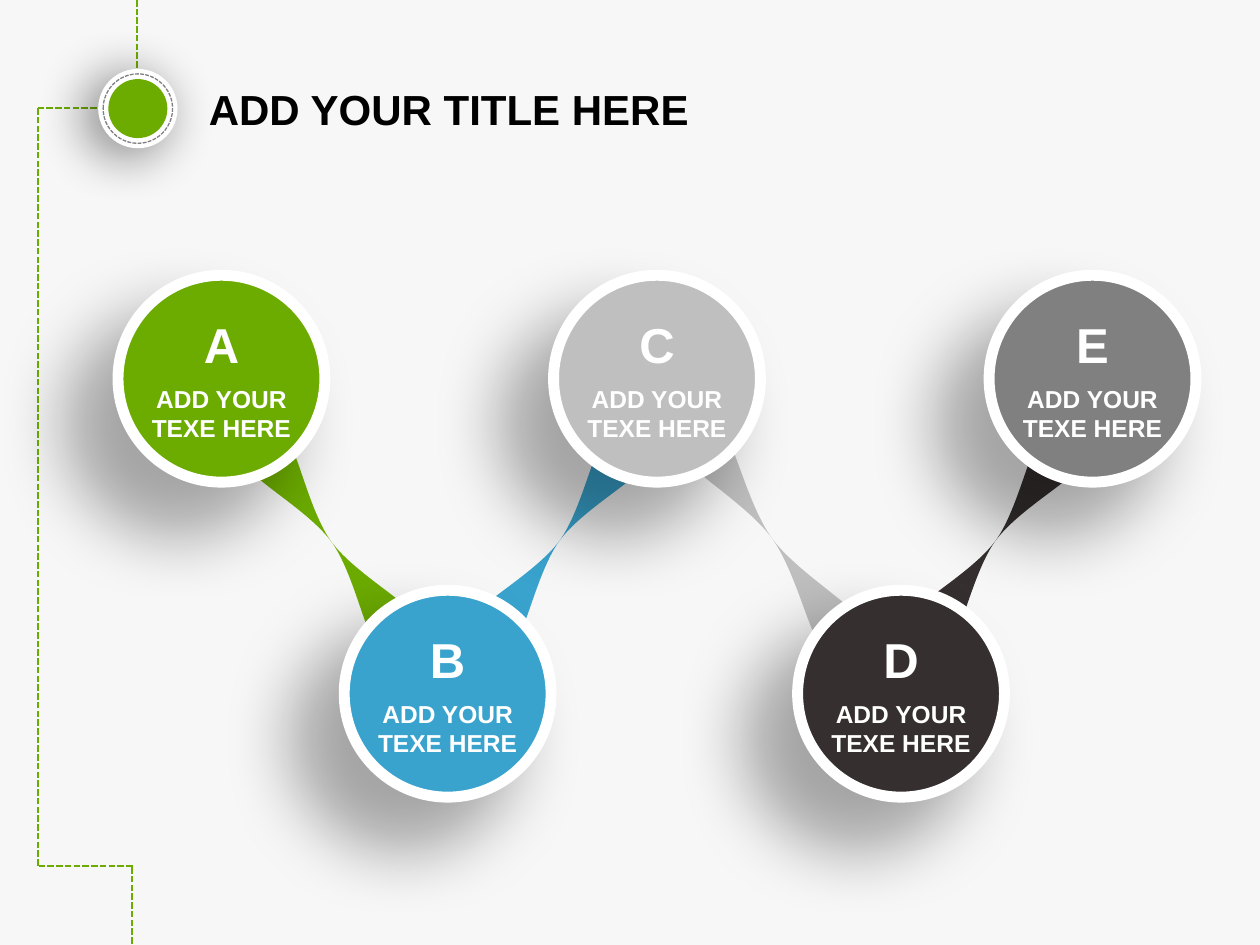
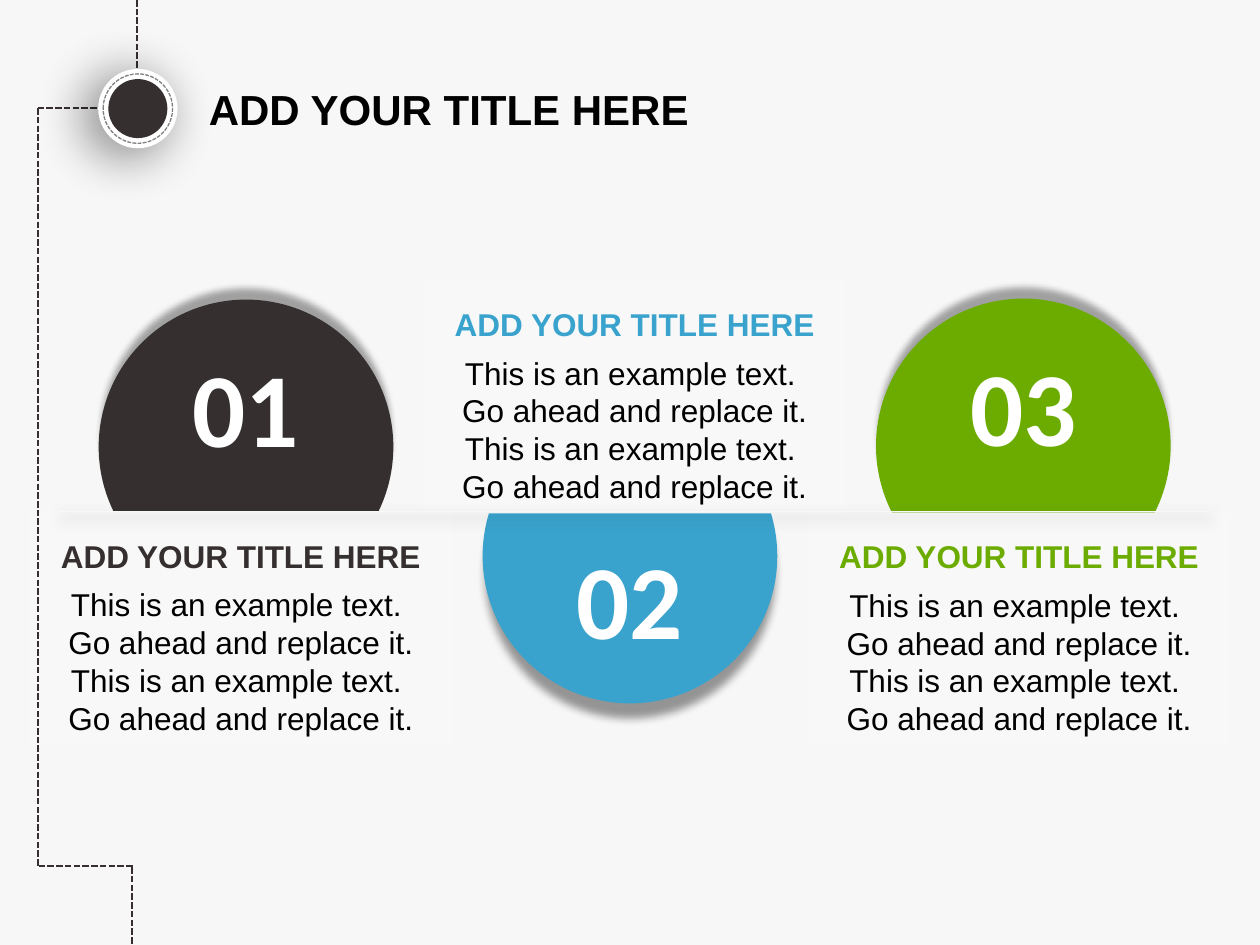
"""Build two infographic slides: a chain of five circles and three numbered discs."""
from lxml import etree
from pptx import Presentation
from pptx.dml.color import RGBColor
from pptx.enum import dml, shapes, text
from pptx.oxml.ns import qn
from pptx.util import Cm, Pt

GREEN = RGBColor(0x6C, 0xAC, 0x00)
BLUE = RGBColor(0x39, 0xA3, 0xCD)
DARK = RGBColor(0x35, 0x2F, 0x2F)
SILVER = RGBColor(0xBF, 0xBF, 0xBF)
GRAY = RGBColor(0x80, 0x80, 0x80)
WHITE = RGBColor(0xFF, 0xFF, 0xFF)
BLACK = RGBColor(0x00, 0x00, 0x00)
PAPER = RGBColor(0xF8, 0xF8, 0xF8)
BACK = RGBColor(0xF7, 0xF7, 0xF7)

TITLE = "ADD YOUR TITLE HERE"
LABEL = "ADD YOUR TEXE HERE"
BODY = ["This is an example text. ", "Go ahead and replace it."] * 2

OVAL = shapes.MSO_SHAPE.OVAL
RECT = shapes.MSO_SHAPE.RECTANGLE
TOP, MIDDLE, BOTTOM = (text.MSO_ANCHOR.TOP, text.MSO_ANCHOR.MIDDLE,
                       text.MSO_ANCHOR.BOTTOM)
CENTER = text.PP_ALIGN.CENTER
DASH = dml.MSO_LINE.SQUARE_DOT

ARMS = [(0.76, 2.18, 2.87, 2.18), (2.76, 0, 2.76, 2.11)]
SPINE = (0.76, 2.18, 0.76, 17.48)
FOOT = [(0.78, 17.46, 2.69, 17.46), (2.66, 17.48, 2.66, 19.05)]
BADGE = (2.78, 2.19)

HIGH, LOW, BALL = 5.55, 11.9, 4.17
BALLS = [
    ("A", 2.38, HIGH, GREEN),
    ("B", 6.94, LOW, BLUE),
    ("C", 11.16, HIGH, SILVER),
    ("E", 19.94, HIGH, GRAY),
    ("D", 16.08, LOW, DARK),
]

RIBBONS = [
    (20.07, 10.9, 306, 1, DARK),
    (15.56, 10.85, 54, 1.08, SILVER),
    (11.28, 10.9, 306, 1, BLUE),
    (6.68, 10.92, 54, 1, GREEN),
]
HALF = [
    (-1.74, -0.46), (-0.69, 0), (0, 0),
    (0.69, 0), (1.74, -0.46), (2.06, -0.46),
    (2.34, -0.46), (1.82, -0.14), (1.82, 0),
    (1.82, 0.14), (2.34, 0.46), (2.02, 0.46),
]

DISC, CARD_W, CARD_H = 5.94, 8.53, 4.7
UP, DOWN = (35, 4, 8, 270, 98), (40, 5, 10, 90, 98)
STEPS = [
    ("01", DARK, (1.99, 6.04), (0.59, 10.32), TOP, UP),
    ("02", BLUE, (9.73, 8.24), (8.53, 5.65), BOTTOM, DOWN),
    ("03", GREEN, (17.66, 6.02), (16.28, 10.33), TOP, UP),
]


def cast(item, *glow):
    """Clear the shadow, then add one from (opacity, blur, distance, angle, scale)."""
    props = item._element.spPr
    for old in props.findall(qn("a:effectLst")):
        props.remove(old)
    effect = etree.SubElement(props, qn("a:effectLst"))
    if glow:
        alpha, blur, dist, angle, scale = glow
        outer = etree.SubElement(
            effect, qn("a:outerShdw"), blurRad=str(Pt(blur)),
            dist=str(Pt(dist)), dir=str(angle * 60000), sx=str(scale * 1000),
            sy=str(scale * 1000), algn="ctr", rotWithShape="0")
        tint = etree.SubElement(outer, qn("a:srgbClr"), val=str(BLACK))
        etree.SubElement(tint, qn("a:alpha"), val=str(alpha * 1000))


def stroke(item, color, width, dash=None):
    """Set the line of a shape or connector."""
    item.line.color.rgb = color
    item.line.width = Pt(width)
    if dash:
        item.line.dash_style = dash


def paint(item, fill=None, line=None, width=0.75, dash=None):
    """Set fill and outline."""
    if fill is None:
        item.fill.background()
    else:
        item.fill.solid()
        item.fill.fore_color.rgb = fill
    if line is None:
        item.line.fill.background()
    else:
        stroke(item, line, width, dash)


def form(home, kind, x, y, w, h, glow=(), **look):
    """Add a painted preset shape to a slide or group."""
    item = home.shapes.add_shape(kind, Cm(x), Cm(y), Cm(w), Cm(h))
    paint(item, **look)
    cast(item, *glow)
    return item


def rule(slide, ends, color, width=1.25, dash=DASH, glow=()):
    """Add a straight line."""
    item = slide.shapes.add_connector(
        shapes.MSO_CONNECTOR.STRAIGHT, *[Cm(v) for v in ends])
    stroke(item, color, width, dash)
    cast(item, *glow)


def write(item, lines, anchor, align=None, inset=True):
    """Fill a shape with (words, size, color, bold, font, after, spacing) lines."""
    frame = item.text_frame
    frame.word_wrap = True
    frame.vertical_anchor = anchor
    if not inset:
        frame.margin_left = frame.margin_right = 0
        frame.margin_top = frame.margin_bottom = 0
    for i, (words, size, color, bold, face, after, space) in enumerate(lines):
        para = frame.paragraphs[0] if i == 0 else frame.add_paragraph()
        para.alignment = align
        para.space_after = Pt(after)
        para.line_spacing = space
        run = para.add_run()
        run.text = words
        run.font.size = Pt(size)
        run.font.bold = bold
        run.font.name = face
        run.font.color.rgb = color


def header(slide, color):
    """Draw the dashed arms, the badge and the title."""
    for ends in ARMS:
        rule(slide, ends, color)
    rings = [
        (1.6, dict(fill=WHITE, glow=(40, 28, 8, 150, 112))),
        (1.19, dict(fill=color)),
        (1.4, dict(line=GRAY, dash=DASH)),
    ]
    badge = slide.shapes.add_group_shape()
    for size, look in rings:
        x, y = (v - size / 2 for v in BADGE)
        form(badge, OVAL, x, y, size, size, **look)
    for ends in FOOT:
        rule(slide, ends, color)
    box = slide.shapes.add_textbox(Cm(3.96), Cm(1.3), Cm(13.69), Cm(1.78))
    write(box, [(TITLE, 24, BLACK, True, "Arial", 0, 1)], MIDDLE)


def bend(item):
    """Turn each three line segments into one Bezier curve."""
    legs = list(item._element.iter(qn("a:lnTo")))
    for i in range(0, len(legs), 3):
        curve = etree.Element(qn("a:cubicBezTo"))
        legs[i].addprevious(curve)
        for leg in legs[i:i + 3]:
            curve.append(leg[0])
            leg.getparent().remove(leg)


def ribbon(slide, x, y, turn, stretch, color):
    """Draw one twisted ribbon about its crossing point."""
    loop = HALF + [(-dx, -dy) for dx, dy in HALF]
    dots = [(Cm(x + stretch * dx), Cm(y + dy)) for dx, dy in loop]
    pen = slide.shapes.build_freeform(*dots[-1], scale=1.0)
    pen.add_line_segments(dots, close=True)
    item = pen.convert_to_shape()
    bend(item)
    item.rotation = turn
    paint(item, color)
    cast(item)


def chain(slide):
    """Draw five circles joined by ribbons."""
    for link in RIBBONS:
        ribbon(slide, *link)
    header(slide, GREEN)
    rule(slide, SPINE, GREEN)
    for name, x, y, color in BALLS:
        ball = form(slide, OVAL, x, y, BALL, BALL, (33, 39, 36, 135, 105),
                    fill=color, line=WHITE, width=6.25)
        write(ball, [(name, 28, WHITE, True, "Arial", 6, 1),
                     (LABEL, 14, WHITE, True, "Arial", 0, 1)],
              MIDDLE, CENTER, inset=False)


def discs(slide):
    """Draw three numbered discs, each cut off by its text card."""
    header(slide, DARK)
    for num, color, spot, place, anchor, glow in STEPS:
        disc = form(slide, OVAL, *spot, DISC, DISC, glow, fill=color)
        write(disc, [(num, 60, WHITE, True, "Calibri", 0, 1)],
              anchor, CENTER, inset=False)
        card = form(slide, RECT, *place, CARD_W, CARD_H, fill=PAPER)
        write(card, [(TITLE, 18, color, True, "Arial", 6, 1.5)]
              + [(row, 18, BLACK, False, "Arial", 0, 1) for row in BODY],
              TOP, CENTER)
        card.text_frame.auto_size = text.MSO_AUTO_SIZE.SHAPE_TO_FIT_TEXT
    rule(slide, SPINE, DARK)
    rule(slide, (1.19, 10.31, 24.41, 10.31), PAPER, 0.75, None,
         (34, 8, 3, 90, 100))


def main():
    """Build and save the deck."""
    deck = Presentation()
    deck.slide_width, deck.slide_height = Cm(25.4), Cm(19.05)
    for draw in (chain, discs):
        slide = deck.slides.add_slide(deck.slide_layouts[6])
        slide.background.fill.solid()
        slide.background.fill.fore_color.rgb = BACK
        draw(slide)
    deck.save("out.pptx")


if __name__ == "__main__":
    main()
